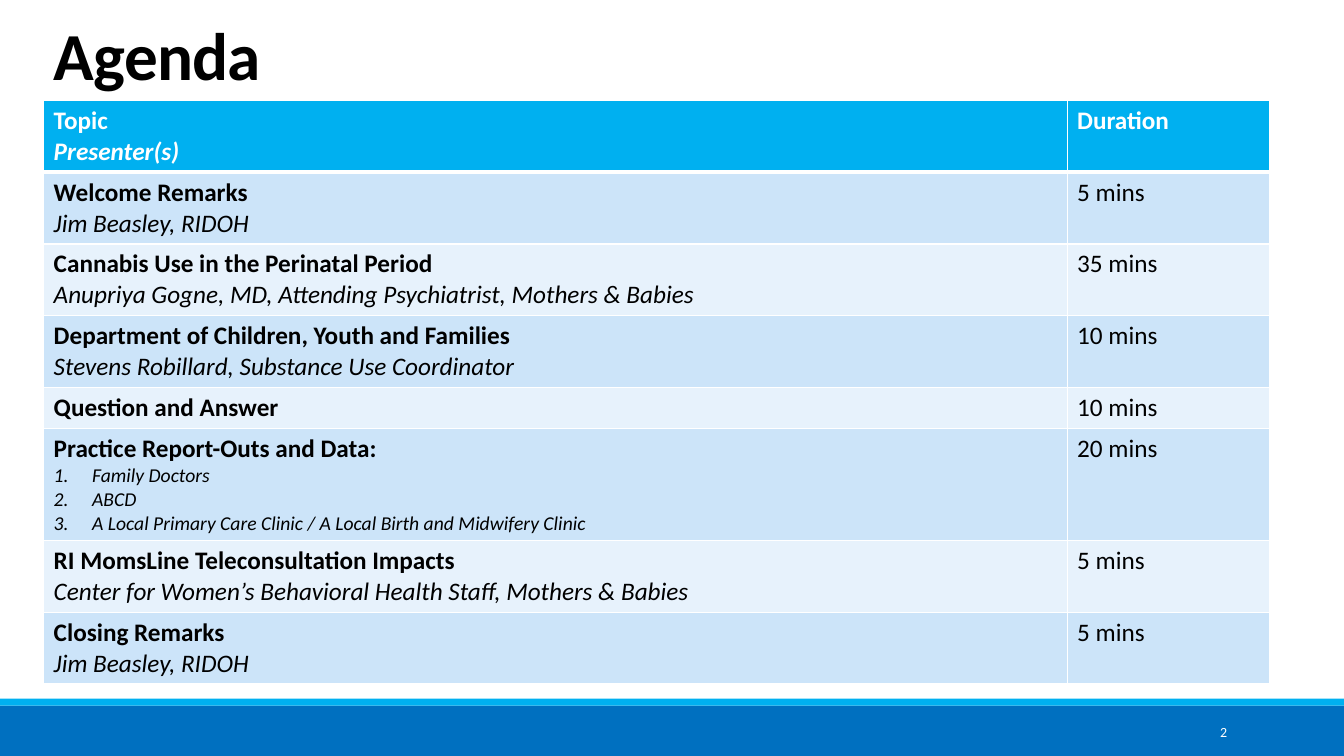
import pptx
import pptx.dml.color
import pptx.enum.shapes
import pptx.enum.text
import pptx.oxml
import pptx.oxml.ns
import pptx.util

ANCHOR = pptx.enum.text.MSO_ANCHOR
ALIGN = pptx.enum.text.PP_ALIGN
WHITE, BLACK, SKY, BLUE = "FFFFFF", "000000", "00B0F0", "0070C0"
BANDS = ("CCE4F9", "E7F2FC")
COLUMNS = (76.15, 15.1)
ROW_HEIGHTS = {1: 5.47, 2: 9.47, 4: 14.87}

BOLD, ITALIC, PLAIN = {"bold": True}, {"italic": True}, {}
HEADER = ([("Topic", BOLD), ("Presenter(s)", {"bold": True, "italic": True})],
          ("Duration", BOLD))
SESSIONS = [
    ("Welcome Remarks", ["Jim Beasley, RIDOH"], "5 mins"),
    ("Cannabis Use in the Perinatal Period",
     ["Anupriya Gogne, MD, Attending Psychiatrist, Mothers & Babies"], "35 mins"),
    ("Department of Children, Youth and Families",
     ["Stevens Robillard, Substance Use Coordinator"], "10 mins"),
    ("Question and Answer", [], "10 mins"),
    ("Practice Report-Outs and Data:",
     ["Family Doctors", "ABCD",
      "A Local Primary Care Clinic / A Local Birth and Midwifery Clinic"], "20 mins"),
    ("RI MomsLine Teleconsultation Impacts",
     ["Center for Women’s Behavioral Health Staff, Mothers & Babies"], "5 mins"),
    ("Closing Remarks", ["Jim Beasley, RIDOH"], "5 mins"),
]


def color(value):
    return pptx.dml.color.RGBColor.from_string(value)


class AgendaSlide:
    """Draws styled elements on one slide, with lengths in percent of its size."""

    font_name = "Calibri"

    def __init__(self, presentation):
        self.width = presentation.slide_width
        self.height = presentation.slide_height
        self.slide = presentation.slides.add_slide(presentation.slide_layouts[5])

    def across(self, share):
        return round(self.width * share / 100)

    def down(self, share):
        return round(self.height * share / 100)

    def box(self, left, top, width, height):
        return self.across(left), self.down(top), self.across(width), self.down(height)

    def run(self, paragraph, text, size, ink, bold=False, italic=False):
        run = paragraph.add_run()
        run.text = text
        font = run.font
        font.name, font.size = self.font_name, pptx.util.Pt(size)
        font.bold, font.italic = bold, italic
        font.color.rgb = color(ink)
        return run

    def bar(self, top, height, fill):
        shape = self.slide.shapes.add_shape(
            pptx.enum.shapes.MSO_SHAPE.RECTANGLE, *self.box(0, top, 100, height))
        shape.shadow.inherit = False
        shape.fill.solid()
        shape.fill.fore_color.rgb = color(fill)
        shape.line.fill.background()

    def title(self, text, *place):
        shape = self.slide.shapes.title
        shape.left, shape.top, shape.width, shape.height = self.box(*place)
        frame = shape.text_frame
        frame.auto_size = pptx.enum.text.MSO_AUTO_SIZE.NONE
        frame.vertical_anchor = ANCHOR.BOTTOM
        paragraph = frame.paragraphs[0]
        paragraph.alignment = ALIGN.LEFT
        paragraph.line_spacing = 0.85
        run = self.run(paragraph, text, 48, BLACK, bold=True)
        run.font._element.set("spc", "-50")

    def page_number(self, text, *place):
        frame = self.slide.shapes.add_textbox(*self.box(*place)).text_frame
        frame.word_wrap = True
        frame.vertical_anchor = ANCHOR.MIDDLE
        paragraph = frame.paragraphs[0]
        paragraph.alignment = ALIGN.RIGHT
        self.run(paragraph, text, 10, WHITE)

    def number(self, paragraph):
        properties = paragraph._p.get_or_add_pPr()
        indent = pptx.util.Inches(0.38)
        properties.set("marL", str(indent))
        properties.set("indent", str(-indent))
        bullet = pptx.oxml.parse_xml(
            f'<a:buAutoNum {pptx.oxml.ns.nsdecls("a")} type="arabicPeriod"/>')
        properties.append(bullet)

    def borders(self, cell, bottom):
        properties = cell._tc.get_or_add_tcPr()
        widths = {"lnL": 1, "lnR": 1, "lnT": 1, "lnB": bottom}
        for position, (side, width) in enumerate(widths.items()):
            line = pptx.oxml.parse_xml(
                f'<a:{side} {pptx.oxml.ns.nsdecls("a")} w="{pptx.util.Pt(width)}">'
                f'<a:solidFill><a:srgbClr val="{WHITE}"/></a:solidFill></a:{side}>')
            properties.insert(position, line)

    def cell(self, cell, lines, fill, ink, bottom=1):
        cell.fill.solid()
        cell.fill.fore_color.rgb = color(fill)
        self.borders(cell, bottom)
        numbered = len(lines) > 2
        for index, (text, style) in enumerate(lines):
            frame = cell.text_frame
            paragraph = frame.add_paragraph() if index else frame.paragraphs[0]
            listed = numbered and index > 0
            if listed:
                self.number(paragraph)
            self.run(paragraph, text, 14 if listed else 18, ink, **style)

    def agenda(self, left, top, header, sessions):
        rows = [(header[0], [header[1]])]
        for topic, presenters, duration in sessions:
            lines = [(topic, BOLD)] + [(name, ITALIC) for name in presenters]
            rows.append((lines, [(duration, PLAIN)]))
        heights = [ROW_HEIGHTS[len(topic_lines)] for topic_lines, _ in rows]
        table = self.slide.shapes.add_table(
            len(rows), len(COLUMNS),
            *self.box(left, top, sum(COLUMNS), sum(heights))).table
        for column, share in zip(table.columns, COLUMNS):
            column.width = self.across(share)
        for index, (row, height) in enumerate(zip(rows, heights)):
            table.rows[index].height = self.down(height)
            for position, lines in enumerate(row):
                cell = table.cell(index, position)
                if index == 0:
                    self.cell(cell, lines, SKY, WHITE, bottom=3)
                else:
                    self.cell(cell, lines, BANDS[(index - 1) % 2], BLACK)


def main():
    presentation = pptx.Presentation()
    presentation.slide_width = pptx.util.Inches(13.33)
    presentation.slide_height = pptx.util.Inches(7.5)
    slide = AgendaSlide(presentation)
    slide.bar(93.33, 6.67, BLUE)
    slide.bar(92.4, 0.93, SKY)
    slide.title("Agenda", 3.25, 2.4, 82.5, 10.8)
    slide.page_number("2", 81.25, 94.13, 10.8, 5.33)
    slide.agenda(3.25, 13.33, HEADER, SESSIONS)
    presentation.save("out.pptx")


if __name__ == "__main__":
    main()
